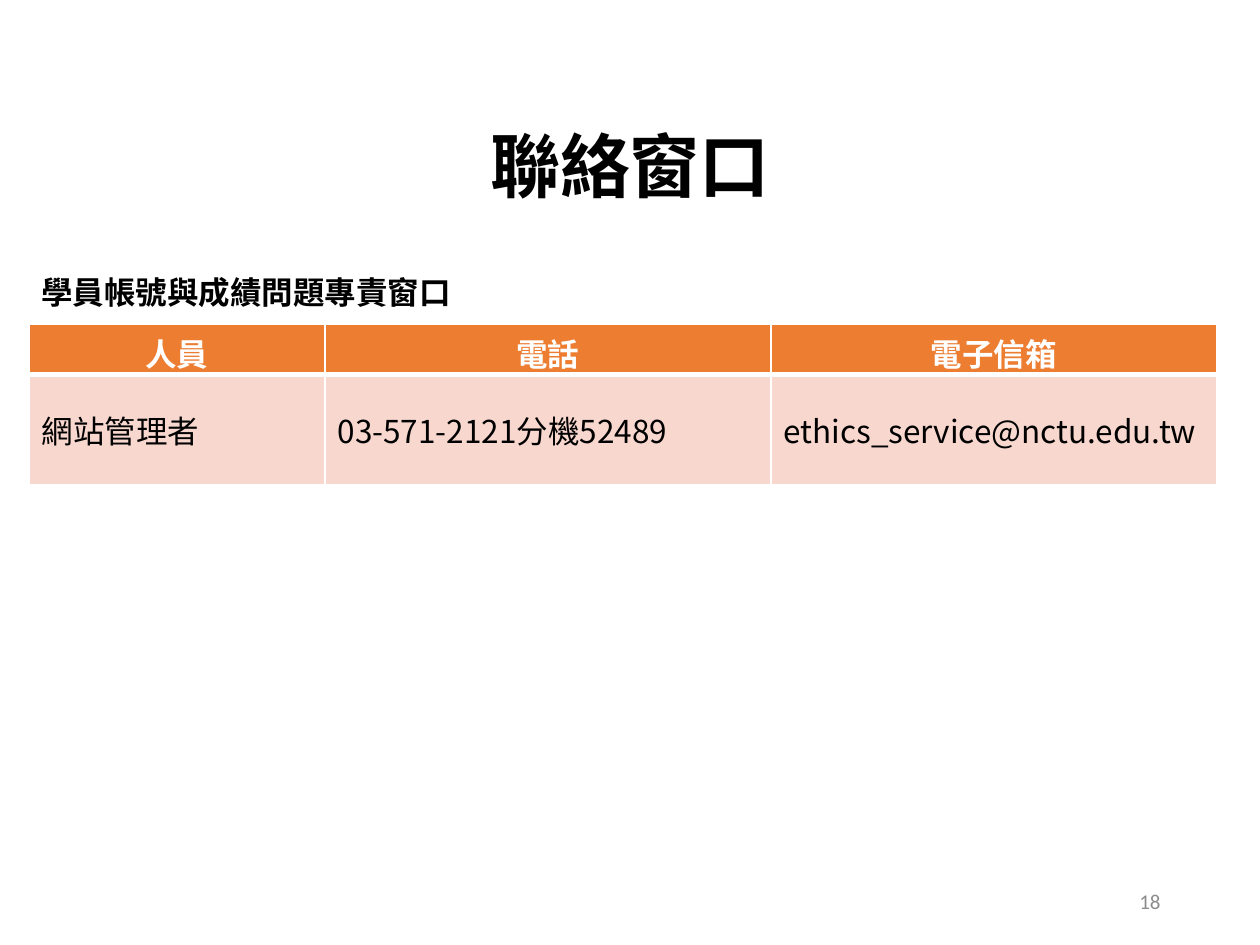
from dataclasses import dataclass

from lxml import etree
from pptx import Presentation
from pptx import util as u
from pptx.dml.color import RGBColor
from pptx.enum import text
from pptx.oxml import ns

SCALE = u.Inches(1) / 126
LEFT = text.PP_ALIGN.LEFT
MID = text.PP_ALIGN.CENTER
RIGHT = text.PP_ALIGN.RIGHT
TOP = text.MSO_ANCHOR.TOP
CENTER = text.MSO_ANCHOR.MIDDLE


@dataclass(frozen=True)
class Theme:
    face: str = "Noto Sans CJK SC"
    plain: str = "Calibri"
    ink: str = "000000"
    white: str = "FFFFFF"
    gray: str = "8C8C8C"
    head: str = "ED7D31"
    body: str = "F8D7CE"
    title: int = 40
    base: int = 18
    small: int = 12


def px(*sizes):
    return [u.Emu(round(size * SCALE)) for size in sizes]


def write(frame, words, face, size, color, bold=False, align=LEFT, line=None):
    para = frame.paragraphs[0]
    para.alignment = align
    if line:
        para.line_spacing = line
    run = para.add_run()
    run.text = words
    font = run.font
    font.name, font.size, font.bold = face, u.Pt(size), bold
    font.color.rgb = RGBColor.from_string(color)
    props = run._r.get_or_add_rPr()
    etree.SubElement(props, ns.qn("a:ea"), typeface=face)


def edge(cell, color, low):
    props = cell._tc.get_or_add_tcPr()
    widths = {"lnL": 1, "lnR": 1, "lnT": 1, "lnB": low}
    for spot, (tag, width) in enumerate(widths.items()):
        line = etree.Element(ns.qn(f"a:{tag}"), w=str(u.Pt(width)))
        fill = etree.SubElement(line, ns.qn("a:solidFill"))
        etree.SubElement(fill, ns.qn("a:srgbClr"), val=color)
        props.insert(spot, line)


class Page:
    def __init__(self, deck, theme):
        self.theme = theme
        self.slide = deck.slides.add_slide(deck.slide_layouts[6])

    def label(self, words, box, anchor=TOP, wrap=True, **style):
        frame = self.slide.shapes.add_textbox(*px(*box)).text_frame
        frame.word_wrap = wrap
        frame.vertical_anchor = anchor
        if not wrap:
            frame.auto_size = text.MSO_AUTO_SIZE.SHAPE_TO_FIT_TEXT
        write(frame, words, **style)

    def table(self, rows, left, top, widths, heights):
        look = self.theme
        box = px(left, top, sum(widths), sum(heights))
        grid = self.slide.shapes.add_table(len(rows), len(widths), *box).table
        for col, width in zip(grid.columns, px(*widths)):
            col.width = width
        for row, height in zip(grid.rows, px(*heights)):
            row.height = height
        for r, row in enumerate(rows):
            first = r == 0
            for c, words in enumerate(row):
                cell = grid.cell(r, c)
                cell.vertical_anchor = CENTER
                cell.fill.solid()
                cell.fill.fore_color.rgb = RGBColor.from_string(
                    look.head if first else look.body)
                edge(cell, look.white, 3 if first else 1)
                write(cell.text_frame, words, look.face, look.base,
                      look.white if first else look.ink, bold=first,
                      align=MID if first else LEFT)


def main():
    deck = Presentation()
    deck.slide_width, deck.slide_height = px(1260, 945)
    look = Theme()
    page = Page(deck, look)
    page.label("18", (890, 876, 283, 50), anchor=CENTER, face=look.plain,
               size=look.small, color=look.gray, align=RIGHT)
    page.table(
        [("人員", "電話", "電子信箱"),
         ("網站管理者", "03-571-2121分機52489", "ethics_service@nctu.edu.tw")],
        29, 324, (296, 446, 446), (44, 110))
    page.label("聯絡窗口", (141, 78, 978, 183), anchor=CENTER, face=look.face,
               size=look.title, color=look.ink, bold=True, align=MID, line=0.9)
    page.label("學員帳號與成績問題專責窗口", (29, 267, 438, 50), wrap=False,
               face=look.face, size=look.base, color=look.ink, bold=True)
    deck.save("out.pptx")


if __name__ == "__main__":
    main()
